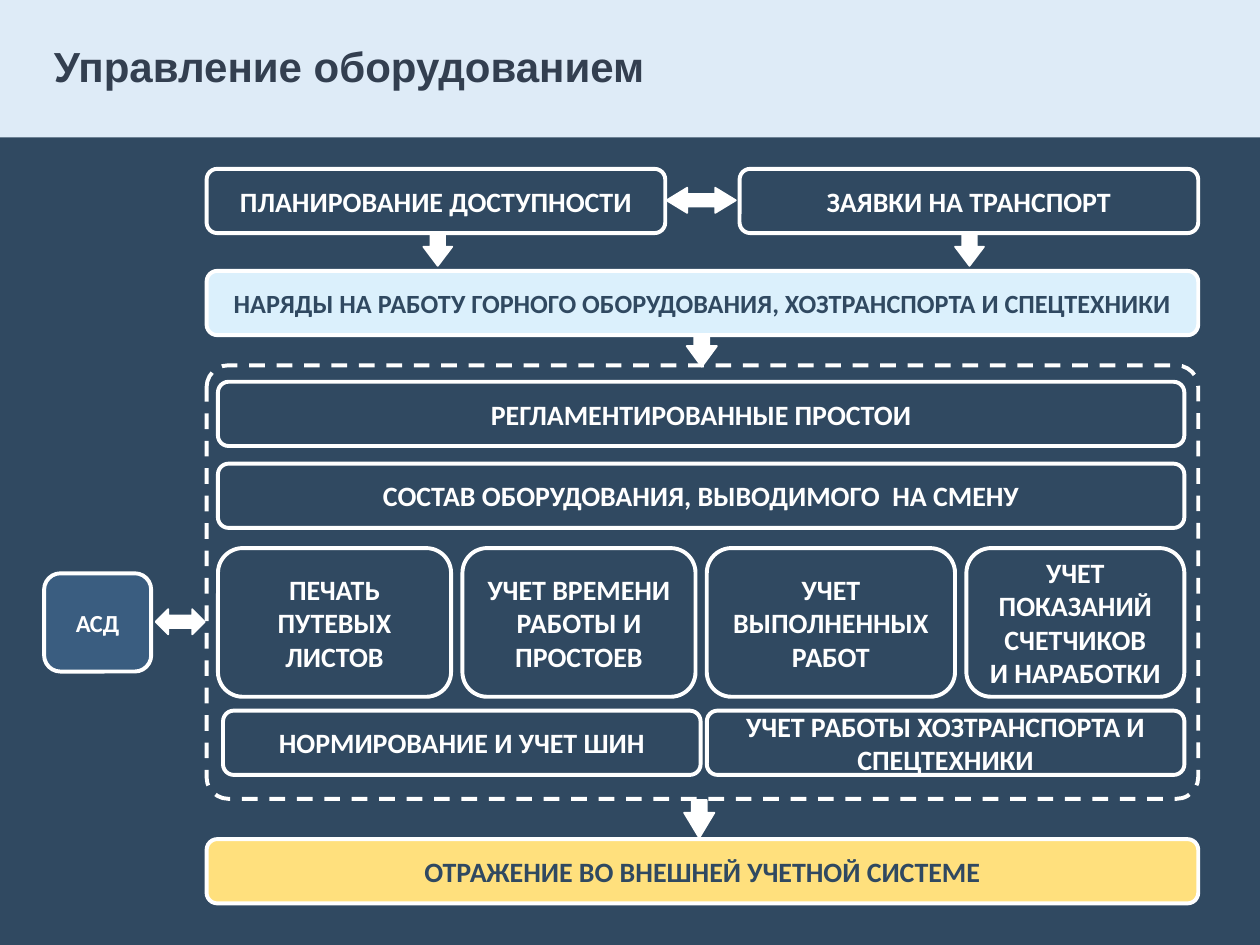
from pptx import Presentation
from pptx.dml.color import RGBColor
from pptx.enum.dml import MSO_LINE
from pptx.enum.shapes import MSO_SHAPE as Shape
from pptx.enum.text import MSO_ANCHOR as Anchor, PP_ALIGN as Align
from pptx.util import Inches, Pt

COLUMNS, ROWS = 100, 75
NAVY, WHITE, SLATE = "304961", "FFFFFF", "333F50"
HEADER_BLUE, PALE_BLUE, STEEL, YELLOW = "DEEBF7", "DBF0FC", "3A5D80", "FFE07D"

LEFT, RIGHT = 16.4, 95.1
INNER_LEFT, INNER_RIGHT = 17.3, 94
BAR_HEIGHT, HALF_WIDTH = 5.1, 36.4
CARD_GAP = 0.9


def color(hex_string):
    return RGBColor.from_string(hex_string)


class Diagram:
    """Draws on one slide; every length is in grid columns and rows."""

    def __init__(self, deck):
        self.column = deck.slide_width / COLUMNS
        self.row = deck.slide_height / ROWS
        self.slide = deck.slides.add_slide(deck.slide_layouts[6])
        background = self.slide.background.fill
        background.solid()
        background.fore_color.rgb = color(NAVY)

    def place(self, left, top, width, height):
        return (round(left * self.column), round(top * self.row),
                round(width * self.column), round(height * self.row))

    def shape(self, kind, area, fill=None, line_width=None, adjustments=()):
        shape = self.slide.shapes.add_shape(kind, *self.place(*area))
        shape.shadow.inherit = False
        for index, value in enumerate(adjustments):
            shape.adjustments[index] = value
        if fill:
            shape.fill.solid()
            shape.fill.fore_color.rgb = color(fill)
        else:
            shape.fill.background()
        if line_width:
            shape.line.color.rgb = color(WHITE)
            shape.line.width = Pt(line_width)
        else:
            shape.line.fill.background()
        return shape

    def set_text(self, frame, text, size, ink, font="Calibri", align=Align.CENTER):
        """Fill a text frame with one paragraph per line of text."""
        frame.word_wrap = True
        frame.vertical_anchor = Anchor.MIDDLE
        for index, line in enumerate(text.split("\n")):
            para = frame.add_paragraph() if index else frame.paragraphs[0]
            para.alignment = align
            span = para.add_run()
            span.text = line
            span.font.name, span.font.size, span.font.bold = font, Pt(size), True
            span.font.color.rgb = color(ink)

    def header(self, text):
        self.shape(Shape.RECTANGLE, (0, 0, COLUMNS, 10.9), HEADER_BLUE)
        box = self.slide.shapes.add_textbox(*self.place(3.3, 1.6, 60.6, 7.8))
        self.set_text(box.text_frame, text, 24, SLATE, "Arial", Align.LEFT)
        box.text_frame.paragraphs[0].line_spacing = 0.9

    def box(self, text, left, top, width, height=BAR_HEIGHT,
            fill=NAVY, ink=WHITE, size=16):
        box = self.shape(Shape.ROUNDED_RECTANGLE, (left, top, width, height), fill, 2.25)
        self.set_text(box.text_frame, text, size, ink)

    def dashed_frame(self, left, top, width, height):
        frame = self.shape(Shape.ROUNDED_RECTANGLE, (left, top, width, height),
                           line_width=2.25, adjustments=[0.05])
        frame.line.dash_style = MSO_LINE.DASH

    def down_arrow(self, center, top, width, height, head):
        self.shape(Shape.DOWN_ARROW, (center - width / 2, top, width, height),
                   WHITE, 1, [0.5, head])

    def two_way_arrow(self, left, top, width, head):
        self.shape(Shape.LEFT_RIGHT_ARROW, (left, top, width, 2), WHITE, 1, [0.5, head])


def main():
    deck = Presentation()
    deck.slide_width, deck.slide_height = Inches(10), Inches(7.5)
    diagram = Diagram(deck)
    full_width, inner_width = RIGHT - LEFT, INNER_RIGHT - INNER_LEFT

    diagram.header("Управление оборудованием")

    # Planning and work orders
    diagram.box("ПЛАНИРОВАНИЕ ДОСТУПНОСТИ", LEFT, 13.4, HALF_WIDTH)
    diagram.box("ЗАЯВКИ НА ТРАНСПОРТ", RIGHT - HALF_WIDTH, 13.4, HALF_WIDTH)
    diagram.box("НАРЯДЫ НА РАБОТУ ГОРНОГО ОБОРУДОВАНИЯ, ХОЗТРАНСПОРТА И СПЕЦТЕХНИКИ",
                LEFT, 21.5, full_width, fill=PALE_BLUE, ink=NAVY, size=15)

    # Shift accounting
    diagram.dashed_frame(LEFT, 29, full_width, 34.4)
    diagram.box("РЕГЛАМЕНТИРОВАННЫЕ ПРОСТОИ", INNER_LEFT, 30.3, inner_width)
    diagram.box("СОСТАВ ОБОРУДОВАНИЯ, ВЫВОДИМОГО  НА СМЕНУ", INNER_LEFT, 36.8, inner_width)
    left = INNER_LEFT
    for text, width in (("ПЕЧАТЬ ПУТЕВЫХ ЛИСТОВ", 18.5),
                        ("УЧЕТ ВРЕМЕНИ РАБОТЫ И ПРОСТОЕВ", 18.5),
                        ("УЧЕТ ВЫПОЛНЕННЫХ РАБОТ", 19.7),
                        ("УЧЕТ ПОКАЗАНИЙ СЧЕТЧИКОВ\nИ НАРАБОТКИ", 17.3)):
        diagram.box(text, left, 43.5, width, 11.8)
        left += width + CARD_GAP
    diagram.box("НОРМИРОВАНИЕ И УЧЕТ ШИН", 17.7, 56.4, 37.9)
    diagram.box("УЧЕТ РАБОТЫ ХОЗТРАНСПОРТА И СПЕЦТЕХНИКИ", 56.1, 56.4, 37.9)

    # External systems
    diagram.box("ОТРАЖЕНИЕ ВО ВНЕШНЕЙ УЧЕТНОЙ СИСТЕМЕ", LEFT, 66.6, full_width,
                fill=YELLOW, ink=NAVY)
    diagram.box("АСД", 3.5, 45.5, 8.5, 7.8, fill=STEEL, size=14)

    # Flow
    for center in (34.75, 76.95):
        diagram.down_arrow(center, 18.6, 2.3, 2.5, 0.66)
    diagram.down_arrow(55.7, 26.7, 2.4, 2.4, 0.68)
    diagram.down_arrow(55.5, 63.5, 2.4, 3, 0.83)
    diagram.two_way_arrow(52.9, 14.9, 5.5, 0.82)
    diagram.two_way_arrow(12.35, 48.35, 3.9, 0.5)

    deck.save("out.pptx")


if __name__ == "__main__":
    main()
